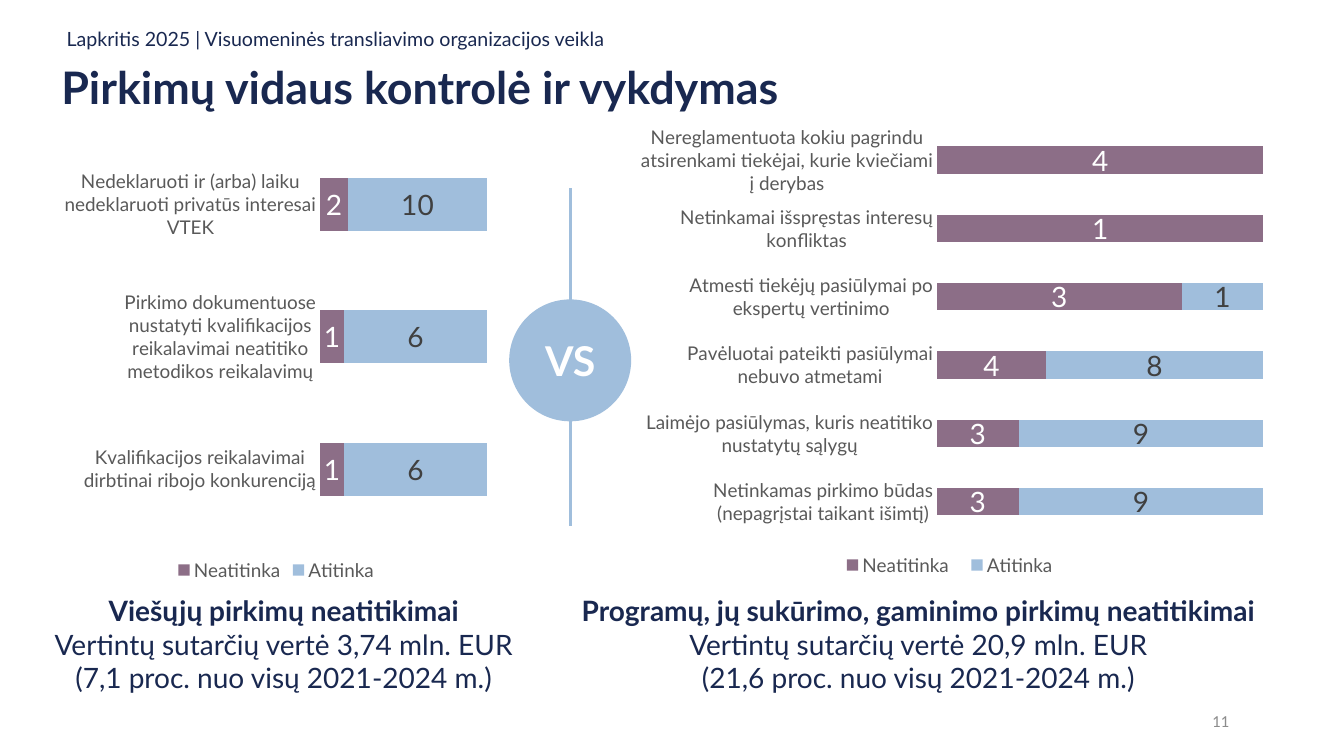
from dataclasses import dataclass

from lxml import etree
from pptx import Presentation
from pptx.chart.data import CategoryChartData
from pptx.dml.color import RGBColor
from pptx.enum.chart import XL_CHART_TYPE, XL_LABEL_POSITION, XL_LEGEND_POSITION, XL_TICK_MARK
from pptx.enum.shapes import MSO_CONNECTOR, MSO_SHAPE
from pptx.enum.text import MSO_ANCHOR, MSO_AUTO_SIZE, PP_ALIGN
from pptx.oxml.ns import qn
from pptx.util import Emu, Pt

PX = 9144
NAVY = RGBColor(0x19, 0x28, 0x50)
BLUE = RGBColor(0xA0, 0xBE, 0xDC)
PLUM = RGBColor(0x8C, 0x6E, 0x87)
WHITE = RGBColor(0xFF, 0xFF, 0xFF)
DARK = RGBColor(0x40, 0x40, 0x40)
GREY = RGBColor(0x59, 0x59, 0x59)
LIGHT_GREY = RGBColor(0x8C, 0x8C, 0x8C)

LEFT, CENTER, RIGHT, JUSTIFY = PP_ALIGN.LEFT, PP_ALIGN.CENTER, PP_ALIGN.RIGHT, PP_ALIGN.JUSTIFY
TOP, MIDDLE = MSO_ANCHOR.TOP, MSO_ANCHOR.MIDDLE
NO_AUTOFIT = MSO_AUTO_SIZE.NONE
STACKED_100 = XL_CHART_TYPE.BAR_STACKED_100
LABEL_CENTER = XL_LABEL_POSITION.CENTER
LEGEND_BOTTOM = XL_LEGEND_POSITION.BOTTOM
NO_TICK = XL_TICK_MARK.NONE

Box = tuple[int, int, int, int]
Layout = tuple[float, float, float, float]


@dataclass
class Comparison:
    box: Box
    plot: Layout
    rows: list[tuple[str, int, int]]
    caption_box: Box
    caption: list[str]
    legend: Layout | None = None


COMPARISONS = [
    Comparison(
        (56, 128, 436, 453),
        (0.6, 0.02, 0.38, 0.87),
        [
            ("Kvalifikacijos reikalavimai dirbtinai ribojo konkurenciją", 1, 6),
            ("Pirkimo dokumentuose nustatyti kvalifikacijos reikalavimai neatitiko metodikos reikalavimų", 1, 6),
            ("Nedeklaruoti ir (arba) laiku nedeklaruoti privatūs interesai VTEK", 2, 10),
        ],
        (31, 589, 501, 135),
        [
            "Viešųjų pirkimų neatitikimai",
            "Vertintų sutarčių vertė 3,74 mln. EUR",
            "(7,1 proc. nuo visų 2021-2024 m.)",
        ],
    ),
    Comparison(
        (631, 96, 622, 484),
        (0.48, 0.06, 0.52, 0.84),
        [
            ("Netinkamas pirkimo būdas (nepagrįstai taikant išimtį)", 3, 9),
            ("Laimėjo pasiūlymas, kuris neatitiko nustatytų sąlygų", 3, 9),
            ("Pavėluotai pateikti pasiūlymai nebuvo atmetami", 4, 8),
            ("Atmesti tiekėjų pasiūlymai po ekspertų vertinimo", 3, 1),
            ("Netinkamai išspręstas interesų konfliktas", 1, 0),
            ("Nereglamentuota kokiu pagrindu atsirenkami tiekėjai, kurie kviečiami į derybas", 4, 0),
        ],
        (551, 589, 720, 101),
        [
            "Programų, jų sukūrimo, gaminimo pirkimų neatitikimai",
            "Vertintų sutarčių vertė 20,9 mln. EUR",
            "(21,6 proc. nuo visų 2021-2024 m.)",
        ],
        (0.31, 0.93, 0.38, 0.06),
    ),
]


def emu(values: Box) -> list[Emu]:
    return [Emu(v * PX) for v in values]


def style_font(font, size: float, color: RGBColor, name: str = "Lato", bold: bool = False) -> None:
    font.size, font.name, font.bold = Pt(size), name, bold
    font.color.rgb = color


def write(tf, lines: list[str], *, size: float, color: RGBColor = NAVY, name: str = "Lato",
          bold_lines: int = 0, align=LEFT, anchor=TOP, inset: bool = True,
          spacing: float = 1.0) -> None:
    tf.word_wrap = True
    tf.auto_size = NO_AUTOFIT
    tf.vertical_anchor = anchor
    if not inset:
        tf.margin_left = tf.margin_top = tf.margin_right = tf.margin_bottom = 0
    for i, line in enumerate(lines):
        p = tf.paragraphs[0] if i == 0 else tf.add_paragraph()
        p.alignment, p.line_spacing = align, spacing
        r = p.add_run()
        r.text = line
        style_font(r.font, size, color, name, i < bold_lines)


def add_text(s, box: Box, lines: list[str], **fmt) -> None:
    write(s.shapes.add_textbox(*emu(box)).text_frame, lines, **fmt)


def set_layout(parent, index: int, values: Layout, inner: bool = False) -> None:
    for old in parent.findall(qn("c:layout")):
        parent.remove(old)
    layout = etree.Element(qn("c:layout"))
    manual = etree.SubElement(layout, qn("c:manualLayout"))
    settings = [("layoutTarget", "inner")] if inner else []
    settings += [("xMode", "edge"), ("yMode", "edge"), *zip("xywh", map(str, values))]
    for tag, value in settings:
        etree.SubElement(manual, qn(f"c:{tag}")).set("val", value)
    parent.insert(index, layout)


def add_comparison(s, item: Comparison) -> None:
    categories, failing, passing = zip(*item.rows)
    data = CategoryChartData()
    data.categories = categories
    data.add_series("Neatitinka", failing)
    data.add_series("Atitinka", passing)
    chart = s.shapes.add_chart(STACKED_100, *emu(item.box), data).chart
    chart.has_title = False
    style_font(chart.font, 13.5, GREY)

    axis = chart.category_axis
    axis.major_tick_mark = axis.minor_tick_mark = NO_TICK
    axis.format.line.fill.background()
    style_font(axis.tick_labels.font, 13.5, GREY)
    chart.value_axis.has_major_gridlines = False
    chart.value_axis.visible = False

    plot = chart.plots[0]
    plot.gap_width, plot.overlap = 150, 100
    plot.vary_by_categories = False
    for series, fill, label_color in zip(plot.series, (PLUM, BLUE), (WHITE, DARK)):
        series.format.fill.solid()
        series.format.fill.fore_color.rgb = fill
        labels = series.data_labels
        labels.show_value = True
        labels.position = LABEL_CENTER
        labels.number_format, labels.number_format_is_linked = "0;;;", False
        style_font(labels.font, 20, label_color)

    chart.has_legend = True
    legend = chart.legend
    legend.position = LEGEND_BOTTOM
    legend.include_in_layout = False
    style_font(legend.font, 13.5, GREY)
    set_layout(plot._element.getparent(), 0, item.plot, inner=True)
    if item.legend:
        set_layout(legend._element, 1, item.legend)

    add_text(s, item.caption_box, item.caption, size=20, bold_lines=1, align=CENTER, inset=False)


def add_versus(s) -> None:
    line = s.shapes.add_connector(MSO_CONNECTOR.STRAIGHT, *emu((566, 187, 566, 522)))
    line.line.color.rgb = BLUE
    line.line.width = Pt(1.75)
    etree.SubElement(line._element.spPr, qn("a:effectLst"))
    sp = s.shapes.add_shape(MSO_SHAPE.OVAL, *emu((505, 297, 121, 121)))
    sp.shadow.inherit = False
    sp.fill.solid()
    sp.fill.fore_color.rgb = BLUE
    sp.line.fill.background()
    write(sp.text_frame, ["VS"], size=29.3, color=WHITE, bold_lines=1,
          align=CENTER, anchor=MIDDLE, inset=False)


def main() -> None:
    prs = Presentation()
    prs.slide_width, prs.slide_height = emu((1333, 750))
    s = prs.slides.add_slide(prs.slide_layouts[5])
    title = s.shapes.title
    title.left, title.top, title.width, title.height = emu((56, 24, 1150, 49))
    write(title.text_frame, ["Lapkritis 2025 | Visuomeninės transliavimo organizacijos veikla"],
          size=14, spacing=0.9)
    add_text(s, (51, 54, 1150, 106), ["Pirkimų vidaus kontrolė ir vykdymas"],
             size=32, bold_lines=1, align=JUSTIFY)
    add_versus(s)
    for item in COMPARISONS:
        add_comparison(s, item)
    add_text(s, (942, 695, 287, 40), ["11"], size=12, color=LIGHT_GREY, name="Calibri",
             align=RIGHT, anchor=MIDDLE)
    prs.save("out.pptx")


if __name__ == "__main__":
    main()
